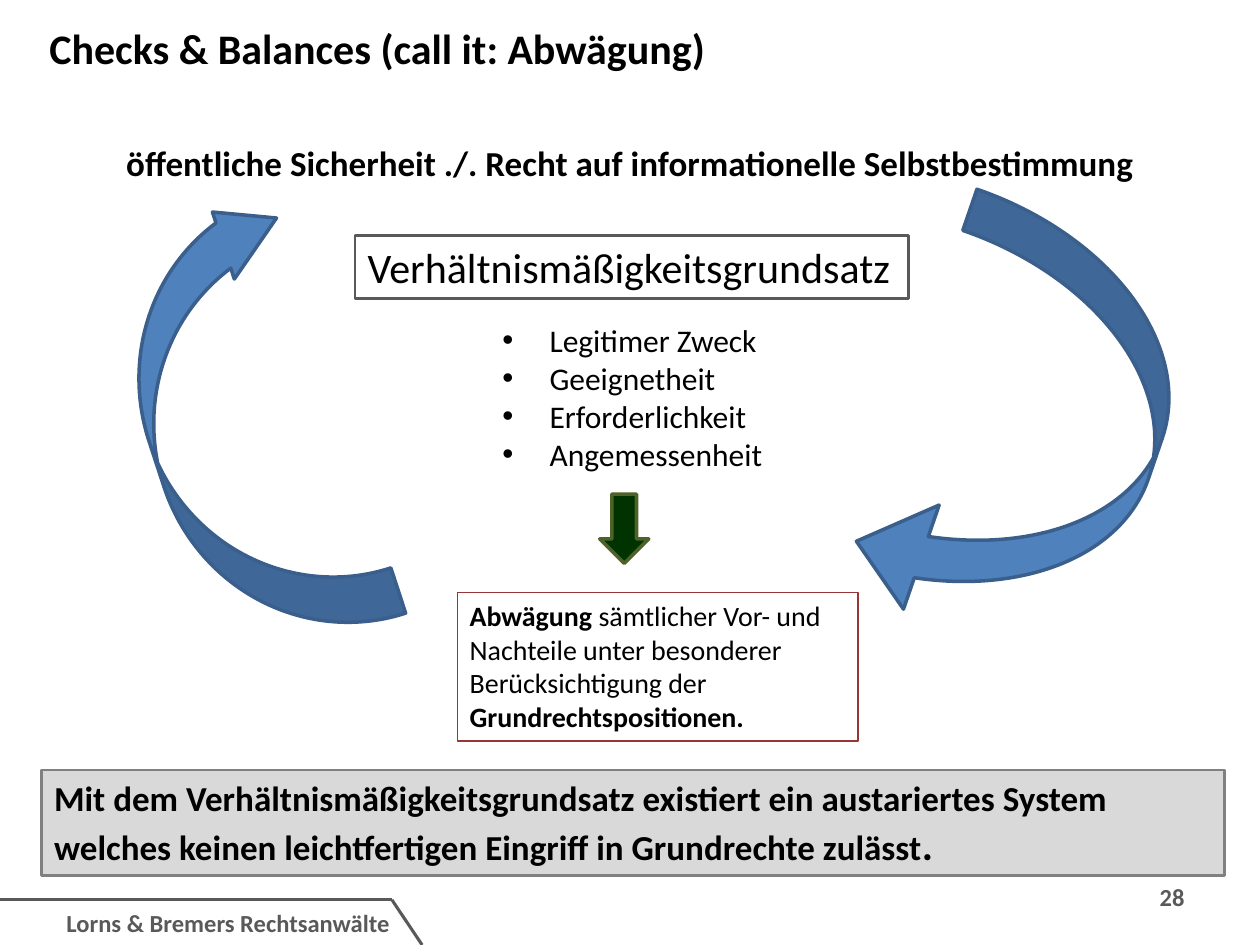
from dataclasses import dataclass

from lxml import etree
from pptx import Presentation
from pptx.dml.color import RGBColor
from pptx.enum.shapes import MSO_CONNECTOR, MSO_SHAPE
from pptx.enum.text import MSO_ANCHOR, MSO_AUTO_SIZE, PP_ALIGN
from pptx.oxml.ns import qn
from pptx.util import Cm, Pt

RECT = MSO_SHAPE.RECTANGLE
DOWN = MSO_SHAPE.DOWN_ARROW
CURVE = MSO_SHAPE.CURVED_LEFT_ARROW
LINE = MSO_CONNECTOR.STRAIGHT
TOP = MSO_ANCHOR.TOP
FIXED = MSO_AUTO_SIZE.NONE
LEFT, MID, RIGHT = PP_ALIGN.LEFT, PP_ALIGN.CENTER, PP_ALIGN.RIGHT


@dataclass(frozen=True)
class Theme:
    """Colours, type sizes and font of the deck."""
    font: str = "Calibri"
    ink: str = "000000"
    grey: str = "595959"
    paper: str = "FFFFFF"
    band: str = "D9D9D9"
    edge: str = "808080"
    blue: str = "4F81BD"
    navy: str = "3A5F8C"
    green: str = "003300"
    olive: str = "4F6228"
    red: str = "953735"
    large: int = 24
    lead: int = 20
    item: int = 18
    body: int = 16
    small: int = 14


T = Theme()


def put(obj, vals):
    """Set each value in the dict on the object."""
    for key, val in vals.items():
        setattr(obj, key, val)


def place(box, x, y, w, h):
    """Turn a spot inside a box into slide lengths."""
    return [Cm(v) for v in (box[0] + x, box[1] + y, w, h)]


def paint(shape, fill=None, line=None, width=1.5):
    """Fill and outline a shape without a shadow."""
    shape.shadow.inherit = False
    if fill:
        shape.fill.solid()
        shape.fill.fore_color.rgb = RGBColor.from_string(fill)
    else:
        shape.fill.background()
    shape.line.color.rgb = RGBColor.from_string(line)
    shape.line.width = Pt(width)


def dot(para):
    """Give a paragraph a hanging bullet."""
    props = para._p.get_or_add_pPr()
    props.set("marL", str(Cm(0.95)))
    props.set("indent", str(-Cm(0.95)))
    etree.SubElement(props, qn("a:buFont")).set("typeface", "Arial")
    etree.SubElement(props, qn("a:buChar")).set("char", "•")


def write(shape, paras, size, color=T.ink, align=LEFT, wrap=True, list_=False):
    """Write paragraphs made of (text, bold, size) runs."""
    frame = shape.text_frame
    put(frame, {"word_wrap": wrap, "vertical_anchor": TOP, "auto_size": FIXED})
    for i, runs in enumerate(paras):
        para = frame.add_paragraph() if i else frame.paragraphs[0]
        para.alignment = align
        if list_:
            dot(para)
        for text, bold, *own in runs:
            run = para.add_run()
            run.text = text
            put(run.font, {"name": T.font, "bold": bold,
                           "size": Pt(own[0] if own else size)})
            run.font.color.rgb = RGBColor.from_string(color)


def head(slide, box):
    """Place the slide title."""
    title = slide.shapes.title
    put(title, dict(zip(("left", "top", "width", "height"),
                        place(box, 0, 0, *box[2:]))))
    paint(title, line=T.paper, width=0.75)
    write(title, [[("Checks & Balances (call it: Abwägung)", True)]], T.large)


def cycle(slide, box):
    """Draw the balance of interests with its arrows."""
    shapes = slide.shapes
    lead = shapes.add_textbox(*place(box, 0, 0, box[2], 1.88))
    write(lead, [[("öffentliche Sicherheit ./. Recht auf informationelle "
                   "Selbstbestimmung", True)]], T.lead, align=MID)

    rule = shapes.add_shape(RECT, *place(box, 5.56, 2.03, 11.15, 1.27))
    paint(rule, line=T.grey)
    write(rule, [[("Verhältnismäßigkeitsgrundsatz", False)]], T.large,
          wrap=False)

    tests = ("Legitimer Zweck", "Geeignetheit", "Erforderlichkeit",
             "Angemessenheit")
    steps = shapes.add_textbox(*place(box, 8.28, 3.63, 5.82, 3.33))
    write(steps, [[(test, False)] for test in tests], T.item,
          wrap=False, list_=True)

    arrows = (
        (DOWN, (10.49, 7.24, 0.99, 1.4), 0, (), T.green, T.olive),
        (CURVE, (1.42, 1.37, 3.84, 9.09), 161.9, (0.25, 0.37, 0.31),
         T.blue, T.navy),
        (CURVE, (16.56, 1.7, 5.16, 8.61), 18.9, (0.17, 0.43, 0.26),
         T.blue, T.navy),
    )
    for kind, spot, turn, bends, fill, line in arrows:
        arrow = shapes.add_shape(kind, *place(box, *spot))
        arrow.rotation = turn
        for i, bend in enumerate(bends):
            arrow.adjustments[i] = bend
        paint(arrow, fill, line, 2)

    weigh = shapes.add_shape(RECT, *place(box, 7.62, 9.22, 8.08, 3))
    paint(weigh, line=T.red, width=0.75)
    write(weigh, [[("Abwägung", True),
                   (" sämtlicher Vor- und Nachteile unter besonderer "
                    "Berücksichtigung der ", False),
                   ("Grundrechtspositionen.", True)]], T.body)


def sum_up(slide, box):
    """Place the closing statement band."""
    band = slide.shapes.add_shape(RECT, *place(box, 0, 0, *box[2:]))
    paint(band, T.band, T.edge)
    write(band, [[("Mit dem Verhältnismäßigkeitsgrundsatz existiert ein "
                   "austariertes System welches keinen leichtfertigen "
                   "Eingriff in Grundrechte zulässt", True),
                  (".", True, T.large)]], T.lead)


def foot(slide, box):
    """Place the firm tab and the page number."""
    shapes = slide.shapes
    knots = ((0, 0.49), (7.9, 0.49), (8.51, box[3]))
    for start, end in zip(knots, knots[1:]):
        ends = place(box, *start, box[0] + end[0], box[1] + end[1])
        edge = shapes.add_connector(LINE, *ends)
        edge.line.color.rgb = RGBColor.from_string(T.grey)
        edge.line.width = Pt(1.75)
        etree.SubElement(edge._element.spPr, qn("a:effectLst"))
    notes = (
        ((1.09, 0.54, 7.01, 0.86), "Lorns & Bremers Rechtsanwälte", LEFT),
        ((18.21, 0, 5.92, 1.02), "28", RIGHT),
    )
    for spot, text, align in notes:
        note = shapes.add_textbox(*place(box, *spot))
        write(note, [[(text, True)]], T.small, T.grey, align, align == RIGHT)


def main():
    """Build the slide and save it."""
    deck = Presentation()
    put(deck, {"slide_width": Cm(25.4), "slide_height": Cm(19.05)})
    slide = deck.slides.add_slide(deck.slide_layouts[5])
    foot(slide, (0, 17.65, 25.4, 1.4))
    head(slide, (0.74, 0.33, 21.16, 2.21))
    cycle(slide, (1.6, 2.72, 22.2, 12.22))
    sum_up(slide, (0.84, 15.52, 23.85, 2.13))
    deck.save("out.pptx")


if __name__ == "__main__":
    main()
